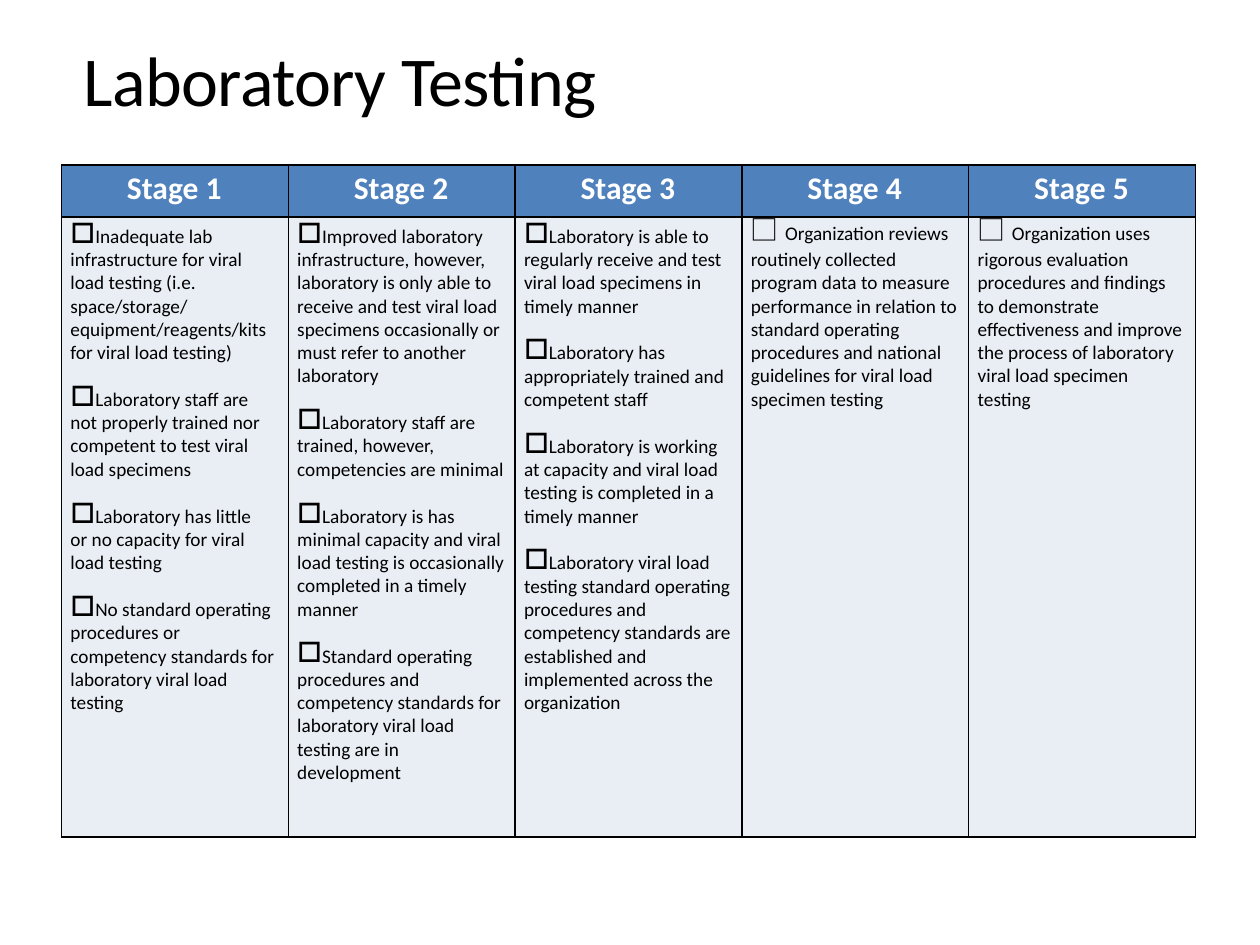
from pptx import Presentation
from pptx.dml.color import RGBColor as RGB
from pptx.enum.text import MSO_ANCHOR as Anchor
from pptx.oxml.ns import qn
from pptx.util import Cm, Pt
from lxml.etree import SubElement as Sub

BLACK = RGB(0, 0, 0)
WHITE = RGB(255, 255, 255)
BLUE = RGB(0x4F, 0x81, 0xBD)
PALE = RGB(0xE9, 0xED, 0xF4)
FONT = "Calibri"
BOX = "□"
BOX_FONT = "Noto Sans CJK JP"

# Each stage: its items, with lines split by \v
STAGES = [
    ["Inadequate lab\vinfrastructure for viral\vload testing (i.e.\vspace/storage/\v"
     "equipment/reagents/kits\vfor viral load testing)",
     "Laboratory staff are\vnot properly trained nor\vcompetent to test viral\vload specimens",
     "Laboratory has little\vor no capacity for viral\vload testing",
     "No standard operating\vprocedures or\vcompetency standards for\v"
     "laboratory viral load\vtesting"],
    ["Improved laboratory\vinfrastructure, however,\vlaboratory is only able to\v"
     "receive and test viral load\vspecimens occasionally or\vmust refer to another\vlaboratory",
     "Laboratory staff are\vtrained, however,\vcompetencies are minimal",
     "Laboratory is has\vminimal capacity and viral\vload testing is occasionally\v"
     "completed in a timely\vmanner",
     "Standard operating\vprocedures and\vcompetency standards for\v"
     "laboratory viral load\vtesting are in\vdevelopment"],
    ["Laboratory is able to\vregularly receive and test\vviral load specimens in\vtimely manner",
     "Laboratory has\vappropriately trained and\vcompetent staff",
     "Laboratory is working\vat capacity and viral load\vtesting is completed in a\vtimely manner",
     "Laboratory viral load\vtesting standard operating\vprocedures and\v"
     "competency standards are\vestablished and\vimplemented across the\vorganization"],
    ["Organization reviews\vroutinely collected\vprogram data to measure\v"
     "performance in relation to\vstandard operating\vprocedures and national\v"
     "guidelines for viral load\vspecimen testing"],
    ["Organization uses\vrigorous evaluation\vprocedures and findings\vto demonstrate\v"
     "effectiveness and improve\vthe process of laboratory\vviral load specimen\vtesting"],
]


class Deck:
    def __init__(self):
        self.prs = Presentation()
        self.prs.slide_width, self.prs.slide_height = Cm(25.4), Cm(19.05)
        self.slide = self.prs.slides.add_slide(self.prs.slide_layouts[6])

    def style(self, run, size, color=BLACK, bold=False, name=FONT):
        font = run.font
        font.size, font.bold, font.name = Pt(size), bold, name
        font.color.rgb = color

    def title(self, text, left, top, width, height):
        frame = self.slide.shapes.add_textbox(left, top, width, height).text_frame
        frame.margin_left = frame.margin_right = 0
        frame.margin_top = frame.margin_bottom = 0
        frame.word_wrap = True
        frame.vertical_anchor = Anchor.MIDDLE
        frame.text = text
        self.style(frame.paragraphs[0].runs[0], 40)
        frame.paragraphs[0].runs[0].font._element.set("spc", "-30")

    def grid(self, left, top, width, heights, count):
        shape = self.slide.shapes.add_table(len(heights), count, left, top, width, sum(heights))
        table = shape.table
        table.first_row = table.horz_banding = False
        for row, height in zip(table.rows, heights):
            row.height = height
        return table

    def cell(self, cell, fill, left, top):
        cell.margin_left, cell.margin_top = left, top
        cell.margin_right = cell.margin_bottom = 0
        props = cell._tc.get_or_add_tcPr()
        for side in ("a:lnL", "a:lnR", "a:lnT", "a:lnB"):
            line = Sub(props, qn(side), w=str(Pt(1)))
            Sub(Sub(line, qn("a:solidFill")), qn("a:srgbClr"), val=str(BLACK))
        cell.fill.solid()
        cell.fill.fore_color.rgb = fill

    def head(self, cell, text):
        self.cell(cell, BLUE, Cm(1.32), Cm(0.08))
        cell.text_frame.text = text
        para = cell.text_frame.paragraphs[0]
        para.space_before = Pt(1.9)
        self.style(para.runs[0], 18, WHITE, True)

    def items(self, cell, texts):
        self.cell(cell, PALE, Cm(0.18), Cm(0.17))
        frame = cell.text_frame
        for i, text in enumerate(texts):
            para = frame.add_paragraph() if i else frame.paragraphs[0]
            para.line_spacing = Pt(13.3)
            if i:
                para.space_before = Pt(13.5)
            if len(texts) > 1:
                self.bullet(para)
            else:
                run = para.add_run()
                run.text = BOX + " "
                self.style(run, 16, name=BOX_FONT)
            self.lines(para, text)

    def lines(self, para, text):
        for i, line in enumerate(text.split("\v")):
            if i:
                para.add_line_break()
            run = para.add_run()
            run.text = line
            self.style(run, 11)

    def bullet(self, para):
        props = para._p.get_or_add_pPr()
        props.set("marL", "0")
        props.set("indent", "0")
        Sub(props, qn("a:buSzPct"), val="145000")
        Sub(props, qn("a:buChar"), char=BOX)


deck = Deck()

# Title
deck.title("Laboratory Testing", Cm(1.68), Cm(0.69), Cm(12), Cm(1.8))

# Stage table
table = deck.grid(Cm(1.24), Cm(3.33), Cm(22.86), [Cm(1.04), Cm(12.5)], len(STAGES))
for col, texts in enumerate(STAGES):
    deck.head(table.cell(0, col), f"Stage {col + 1}")
    deck.items(table.cell(1, col), texts)

deck.prs.save("out.pptx")
